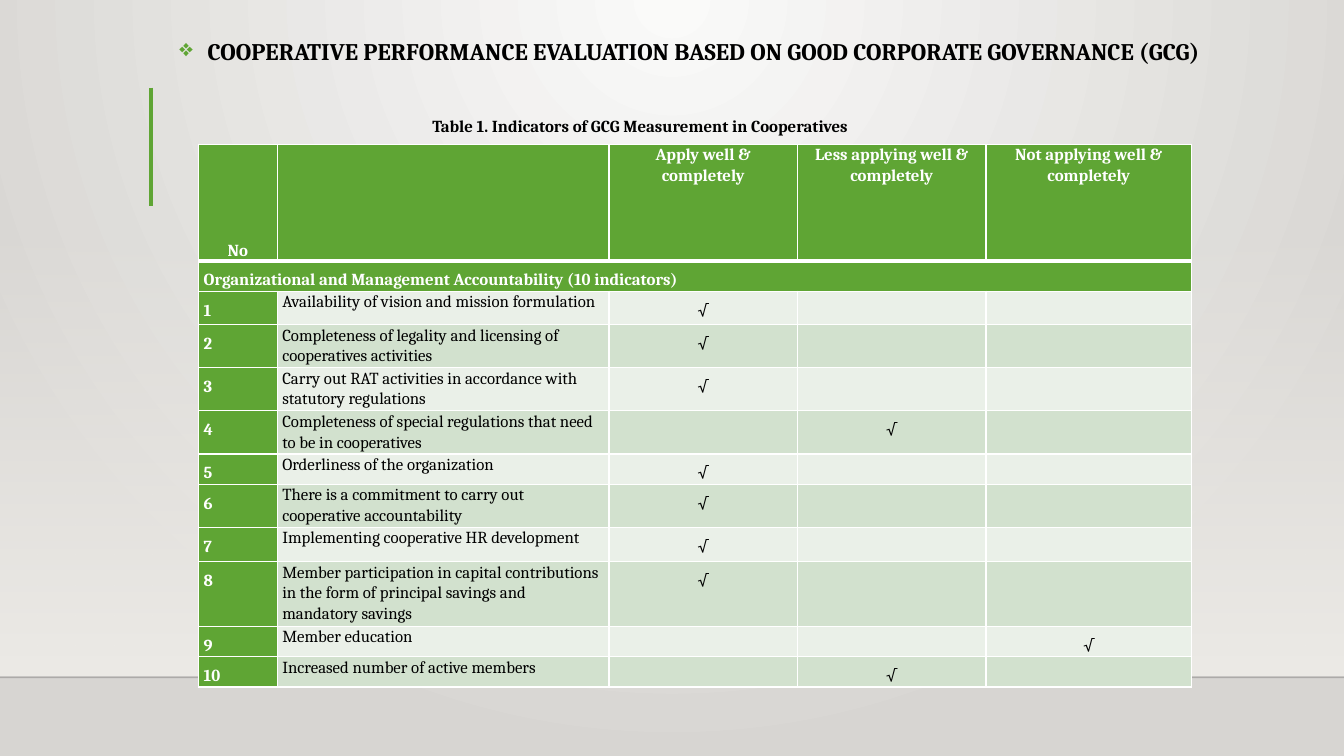
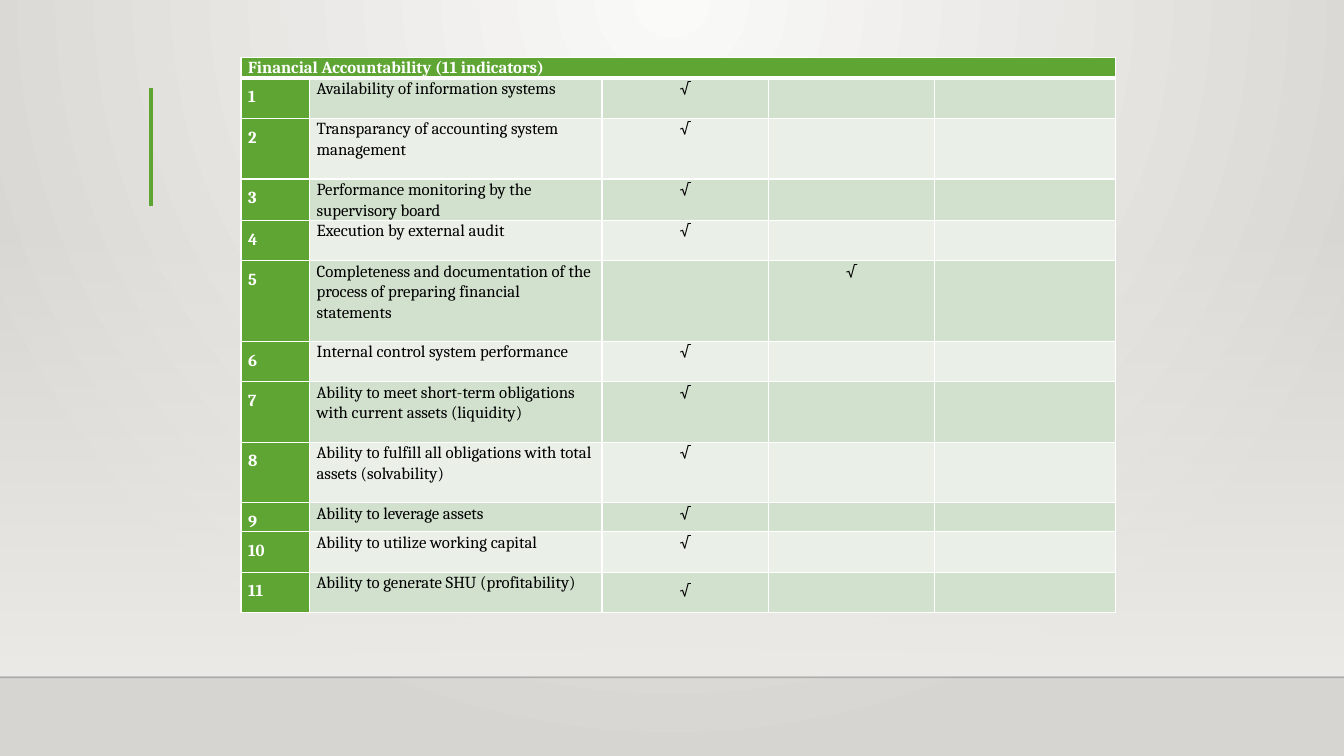
import pptx
import pptx.util
import pptx.dml.color
import pptx.enum.shapes
import pptx.enum.text
import pptx.oxml.ns
import lxml.etree

Inches, Pt = pptx.util.Inches, pptx.util.Pt
RGB = pptx.dml.color.RGBColor
Align, Anchor = pptx.enum.text.PP_ALIGN, pptx.enum.text.MSO_ANCHOR
qn = pptx.oxml.ns.qn

GREEN = RGB(0x5F, 0xA5, 0x34)
PALE = RGB(0xEA, 0xF0, 0xE8)
SAGE = RGB(0xD2, 0xE1, 0xCE)
WHITE = RGB(0xFF, 0xFF, 0xFF)
BLACK = RGB(0, 0, 0)
INK = RGB(0, 0, 1)
FOG = RGB(0xFA, 0xFA, 0xF9)
STONE = RGB(0xD7, 0xD5, 0xD2)
SAND = RGB(0xED, 0xEB, 0xE7)
FONT = "Cambria"


def add(parent, tag, **attrs):
    """Append one XML element."""
    return lxml.etree.SubElement(parent, qn(tag), attrs)


def style(para, color, size=12, bold=True, gap=1.0, align=Align.LEFT):
    """Format a whole paragraph."""
    para.alignment = align
    para.line_spacing = gap
    font = para.font
    font.name, font.size, font.bold = FONT, Pt(size), bold
    font.color.rgb = color


deck = pptx.Presentation()
deck.slide_width, deck.slide_height = Inches(13.33), Inches(7.5)
first = deck.slides.add_slide(deck.slide_layouts[5])
second = deck.slides.add_slide(deck.slide_layouts[6])

# Shared background: radial glow from the top centre
master = deck.slide_master
back = master.background.fill
back.gradient()
for stop, color, place in zip(back.gradient_stops, (FOG, STONE), (0, 1)):
    stop.color.rgb, stop.position = color, place
grad = master.element.find(".//" + qn("a:gradFill"))
grad.remove(grad.find(qn("a:lin")))
add(add(grad, "a:path", path="circle"), "a:fillToRect",
    l="43000", t="0", r="43000", b="100000")

# Shared wall, floor line and accent bar, kept on the master
wall = first.shapes.add_shape(pptx.enum.shapes.MSO_SHAPE.RECTANGLE,
                              0, Inches(2.2), Inches(13.33), Inches(4.5))
wall.shadow.inherit = False
wall.line.fill.background()
wall.fill.gradient()
wall.fill.gradient_angle = 270
for stop, place in zip(wall.fill.gradient_stops, (0, 1)):
    stop.color.rgb, stop.position = SAND, place
add(wall.element.find(".//" + qn("a:srgbClr")), "a:alpha", val="0")
master.shapes.element.append(wall.element)

for x1, y1, x2, y2, color, width, alpha in (
        (0, 6.72, 13.33, 6.72, INK, 1, "20000"),
        (1.5, 0.87, 1.5, 2.04, GREEN, 3, "100000")):
    rule = first.shapes.add_connector(
        pptx.enum.shapes.MSO_CONNECTOR.STRAIGHT,
        Inches(x1), Inches(y1), Inches(x2), Inches(y2))
    rule.line.color.rgb, rule.line.width = color, Pt(width)
    add(rule.element.find(".//" + qn("a:srgbClr")), "a:alpha", val=alpha)
    add(rule.element.spPr, "a:effectLst")
    master.shapes.element.append(rule.element)

# Title with a diamond bullet
title = first.shapes.title
title.left, title.top = Inches(1.68), Inches(0.26)
title.width, title.height = Inches(10.41), Inches(0.6)
frame = title.text_frame
frame.text = ("COOPERATIVE PERFORMANCE EVALUATION BASED ON "
              "GOOD CORPORATE GOVERNANCE (GCG)")
frame.vertical_anchor = Anchor.TOP
frame.auto_size = pptx.enum.text.MSO_AUTO_SIZE.NONE
para = frame.paragraphs[0]
props = para._p.get_or_add_pPr()
props.set("marL", str(Inches(0.28)))
props.set("indent", str(-Inches(0.28)))
add(add(props, "a:buClr"), "a:srgbClr", val=str(GREEN))
add(props, "a:buChar", char="❖")
style(para, BLACK, size=17, gap=1.2)

# Table caption
box = first.shapes.add_textbox(Inches(4.19), Inches(1.1), Inches(4.96), Inches(0.3))
box.text_frame.word_wrap = True
box.text_frame.vertical_anchor = Anchor.MIDDLE
box.text_frame.text = "Table 1. Indicators of GCG Measurement in Cooperatives"
style(box.text_frame.paragraphs[0], BLACK)

# Tables: rows hold height, indicator and the column of the tick
labels = ["No", "", "Apply well & completely",
          "Less applying well & completely", "Not applying well & completely"]
duties = [
    (0.33, "Availability of vision and mission formulation", 2),
    (0.41, "Completeness of legality and licensing of cooperatives activities", 2),
    (0.41, "Carry out RAT activities in accordance with statutory regulations", 2),
    (0.41, "Completeness of special regulations that need to be in cooperatives", 3),
    (0.29, "Orderliness of the organization", 2),
    (0.41, "There is a commitment to carry out cooperative accountability", 2),
    (0.34, "Implementing cooperative HR development", 2),
    (0.61, "Member participation in capital contributions in the form of "
           "principal savings and mandatory savings", 2),
    (0.29, "Member education", 4),
    (0.29, "Increased number of active members", 3),
]
funds = [
    (0.4, "Availability of information systems", 2),
    (0.6, "Transparancy of accounting system management", 2),
    (0.41, "Performance monitoring by the supervisory board", 2),
    (0.4, "Execution by external audit", 2),
    (0.8, "Completeness and documentation of the process of preparing "
          "financial statements", 3),
    (0.4, "Internal control system performance", 2),
    (0.6, "Ability to meet short-term obligations with current assets (liquidity)", 2),
    (0.6, "Ability to fulfill all obligations with total assets (solvability)", 2),
    (0.29, "Ability to leverage assets", 2),
    (0.4, "Ability to utilize working capital", 2),
    (0.4, "Ability to generate SHU (profitability)", 2),
]
tables = [
    (first, 1.97, 1.43, 0.05, 1.5, (0.78, 3.29, 1.87, 1.87, 2.04),
     [(1.16, labels),
      (0.29, ["Organizational and Management Accountability (10 indicators)"])],
     duties),
    (second, 2.39, 0.57, 0.07, 1.07, (0.68, 2.9, 1.65, 1.65, 1.79),
     [(0.2, ["Financial Accountability (11 indicators)"])], funds),
]

for slide, left, top, pad, gap, widths, heads, items in tables:
    rows = list(heads)
    for num, (height, text, tick) in enumerate(items, 1):
        marks = ["√" if col == tick else "" for col in (2, 3, 4)]
        rows.append((height, [str(num), text] + marks))
    grid = slide.shapes.add_table(
        len(rows), 5, Inches(left), Inches(top), Inches(sum(widths)),
        Inches(sum(height for height, _ in rows))).table
    for col, width in zip(grid.columns, widths):
        col.width = Inches(width)

    for r, (height, texts) in enumerate(rows):
        grid.rows[r].height = Inches(height)
        head = r < len(heads)
        band = len(texts) == 1
        if band:
            grid.cell(r, 0).merge(grid.cell(r, 4))
        for c in range(5):
            cell = grid.cell(r, c)
            text = texts[c] if c < len(texts) else ""
            green = head or c == 0
            cell.margin_left = cell.margin_right = Inches(pad)
            cell.margin_top = cell.margin_bottom = 0

            # White borders, heavier below the first row
            for side in "LRTB":
                heavy = r == 0 and side == "B" or r == 1 and side == "T"
                edge = add(cell._tc.get_or_add_tcPr(), "a:ln" + side,
                           w=str(Pt(3 if heavy else 1)))
                add(add(edge, "a:solidFill"), "a:srgbClr", val=str(WHITE))
            cell.fill.solid()
            cell.fill.fore_color.rgb = GREEN if green else SAGE if r % 2 else PALE

            # Text by role: label, section, number, indicator or tick
            cell.text = text
            para = cell.text_frame.paragraphs[0]
            if band:
                space = gap
            elif c == 0:
                space = 1.5
            elif head or c == 1:
                space = 1.07
            else:
                space = gap if r < 11 else 1.5
            middle = not band and (head or c > 1)
            style(para, WHITE if green else BLACK, bold=green, gap=space,
                  align=Align.CENTER if middle else Align.LEFT)
            if text == "No":
                cell.vertical_anchor = Anchor.BOTTOM
            if not text:
                add(para._p, "a:endParaRPr", sz="1200")

deck.save("out.pptx")
